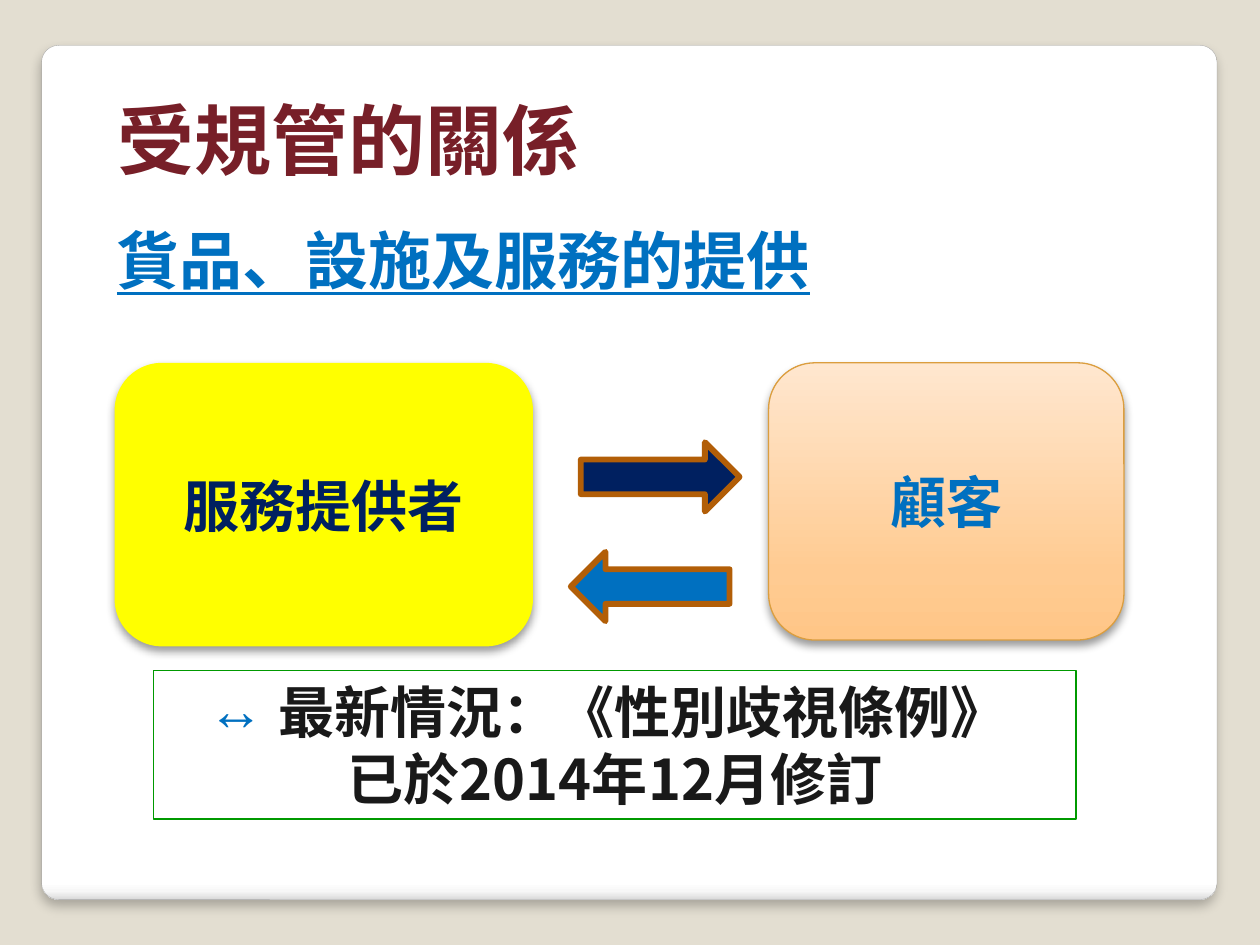
import pptx
import pptx.util
import pptx.dml.color
import pptx.enum.shapes
import pptx.enum.text
import pptx.oxml
import pptx.oxml.ns
import lxml.etree

Inches, Pt = pptx.util.Inches, pptx.util.Pt
KIND = pptx.enum.shapes.MSO_SHAPE
ALIGN = pptx.enum.text.PP_ALIGN
ANCHOR = pptx.enum.text.MSO_ANCHOR
CJK = "Noto Sans CJK TC"

TITLE = "受規管的關係"
TOPIC = "貨品、設施及服務的提供"
NEWS = ["最新情況：《性別歧視條例》", "已於2014年12月修訂"]
PANEL = [(0, "FFFFFF"), (98, "FFFFFF"), (99, "F7F7F7"), (100, "DADADA")]
PEACH = [(0, "FFC687"), (25, "FFCB92"), (100, "FFE7CF")]
PARTIES = [
    ("顧客", (6.1, 2.88, 2.82, 2.2), "0070C0", None, ("DB9E3F", 0.75)),
    ("服務提供者", (0.91, 2.88, 3.32, 2.25), "002060", "FFFF00", None),
]
ARROWS = [((4.61, 3.51), "002060", 0), ((4.53, 4.38), "0070C0", 180)]


def rgb(code):
    """Turn a hex string into a colour."""
    return pptx.dml.color.RGBColor.from_string(code)


def node(body):
    """Parse one element of the drawing namespace."""
    tag, rest = body.split(" ", 1)
    return pptx.oxml.parse_xml(f"<a:{tag} {pptx.oxml.ns.nsdecls('a')} {rest}")


def shape(kind, box, fill=None, line=None):
    """Add a flat shape with an optional fill and line."""
    item = slide.shapes.add_shape(kind, *map(Inches, box))
    item.shadow.inherit = False
    if fill:
        item.fill.solid()
        item.fill.fore_color.rgb = rgb(fill)
    else:
        item.fill.background()
    if line:
        item.line.color.rgb = rgb(line[0])
        item.line.width = Pt(line[1])
    else:
        item.line.fill.background()
    return item


def blend(item, stops, angle):
    """Replace the fill of a shape with a linear gradient."""
    marks = "".join(f'<a:gs pos="{at * 1000}"><a:srgbClr val="{code}"/></a:gs>'
                    for at, code in stops)
    props = item._element.spPr
    old = props.find(pptx.oxml.ns.qn("a:noFill"))
    props.replace(old, node(f'gradFill rotWithShape="1"><a:gsLst>{marks}</a:gsLst>'
                            f'<a:lin ang="{angle * 60000}" scaled="0"/></a:gradFill>'))


def shade(item, alpha, blur, dist):
    """Give a shape a shadow that falls straight down."""
    effects = item._element.spPr.find(pptx.oxml.ns.qn("a:effectLst"))
    effects.append(node(
        f'outerShdw blurRad="{Pt(blur)}" dist="{Pt(dist)}" dir="5400000" rotWithShape="0">'
        f'<a:srgbClr val="000000"><a:alpha val="{alpha * 1000}"/></a:srgbClr></a:outerShdw>'))


def write(para, text, size, color, face="Arial", align=ALIGN.CENTER):
    """Add one bold run to a paragraph."""
    para.alignment = align
    run = para.add_run()
    run.text = text
    font = run.font
    font.name, font.size, font.bold = face, Pt(size), True
    font.color.rgb = rgb(color)
    font._element.find(pptx.oxml.ns.qn("a:latin")).addnext(node(f'ea typeface="{CJK}"/>'))
    return run


deck = pptx.Presentation()
deck.slide_width, deck.slide_height = Inches(10), Inches(7.5)
slide = deck.slides.add_slide(deck.slide_layouts[5])
slide.background.fill.solid()
slide.background.fill.fore_color.rgb = rgb("E3DED1")

title = slide.shapes.title
title.left, title.top, title.width, title.height = map(Inches, (0.83, 0.44, 6.56, 1.08))
title.text_frame.vertical_anchor = ANCHOR.BOTTOM
write(title.text_frame.paragraphs[0], TITLE, 44, "771F28", CJK, ALIGN.LEFT)

panel = shape(KIND.ROUNDED_RECTANGLE, (0.33, 0.36, 9.33, 6.78), line=("A4A4A4", 0.16))
panel.adjustments[0] = 0.02
blend(panel, PANEL, 90)
shade(panel, 25, 6, 4)
title._element.addprevious(panel._element)

for text, box, color, fill, line in PARTIES:
    party = shape(KIND.ROUNDED_RECTANGLE, box, fill, line)
    if not fill:
        blend(party, PEACH, 270)
    shade(party, 40, 5.2, 3)
    party.text_frame.vertical_anchor = ANCHOR.MIDDLE
    write(party.text_frame.paragraphs[0], text, 32, color)

topic = slide.shapes.add_textbox(*map(Inches, (0.83, 1.7, 5.76, 0.71)))
topic.text_frame.word_wrap = False
topic.text_frame.vertical_anchor = ANCHOR.MIDDLE
write(topic.text_frame.paragraphs[0], TOPIC, 36, "0070C0", align=ALIGN.LEFT).font.underline = True

news = shape(KIND.RECTANGLE, (1.22, 5.32, 7.32, 1.18), line=("009900", 0.75))
frame = news.text_frame
frame.vertical_anchor = ANCHOR.MIDDLE
for row, text in enumerate(NEWS):
    para = frame.add_paragraph() if row else frame.paragraphs[0]
    props = para._p.get_or_add_pPr()
    if row:
        props.append(node("buNone />"))
    else:
        props.set("marL", str(Inches(0.39)))
        props.set("indent", str(Inches(-0.56)))
        props.append(node('buClr ><a:srgbClr val="0070C0"/></a:buClr>'))
        props.append(node('buFont typeface="Arial"/>'))
        props.append(node('buChar char="↔"/>'))
    para.line_spacing = Pt(38)
    write(para, text, 32, "191919", CJK)

for spot, fill, turn in ARROWS:
    arrow = shape(KIND.RIGHT_ARROW, (*spot, 1.26, 0.55), fill, ("B25E07", 3.35))
    arrow.rotation = turn

deck.save("out.pptx")
